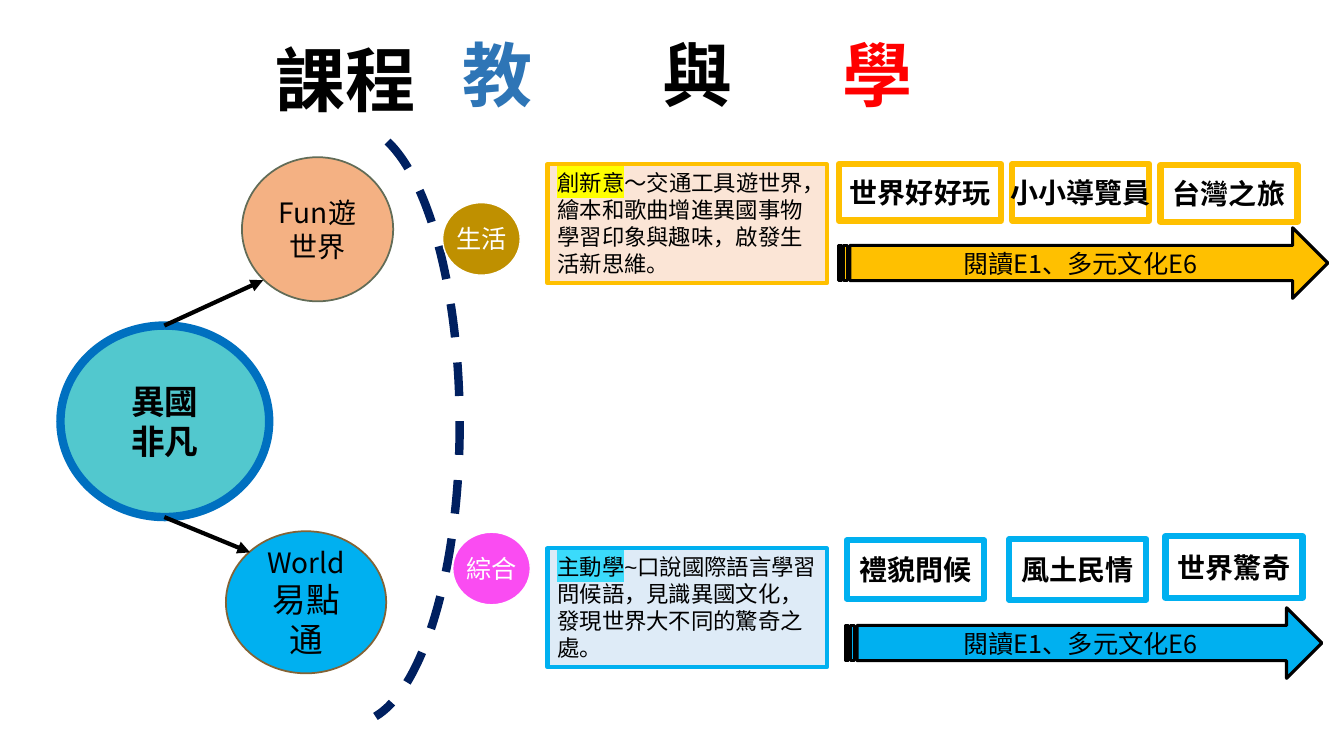
from dataclasses import dataclass
from typing import Optional

from lxml.etree import SubElement
from pptx import Presentation
from pptx.dml.color import RGBColor
from pptx.enum.dml import MSO_LINE
from pptx.enum.shapes import MSO_CONNECTOR, MSO_SHAPE
from pptx.enum.text import MSO_ANCHOR, PP_ALIGN
from pptx.oxml.ns import qn
from pptx.util import Inches, Pt

COLOURS = {
    "black": "000000", "white": "FFFFFF", "red": "FF0000", "title blue": "2E75B6",
    "teal": "52C8CE", "hub edge": "0070C0", "navy": "002060",
    "peach": "F4B183", "peach edge": "626C57", "sky edge": "846335",
    "gold": "FFC000", "pale gold": "FBE5D6", "yellow": "FFFF00", "ochre": "BF9000",
    "sky": "00B0F0", "pale sky": "DEEBF7", "cyan": "3BDBFB", "pink": "FA4CF2",
}
SANS, ARIAL = "Noto Sans CJK SC", "Arial"
CELL = 0.1  # side of one grid cell, in inches


@dataclass
class Area:
    """A place on the grid, in columns and rows."""
    column: float
    row: float
    columns: float
    rows: float


@dataclass
class Span:
    text: str
    size: float
    font: str = SANS
    colour: str = "black"
    bold: bool = False
    highlight: Optional[str] = None


@dataclass
class Figure:
    kind: MSO_SHAPE
    area: Area
    fill: Optional[str]
    edge: str
    weight: float
    paragraphs: list[list[Span]]
    align: PP_ALIGN = PP_ALIGN.CENTER
    anchor: MSO_ANCHOR = MSO_ANCHOR.MIDDLE
    wrap: bool = True


@dataclass
class Lane:
    """One teaching strand: field, description, topics and arrow."""
    colour: str
    pale: str
    marker: str
    field: Span
    field_colour: str
    field_area: Area
    lead: str
    description: str
    description_row: float
    topics: list[tuple[str, Area]]
    arrow_area: Area


def cells(count: float) -> int:
    return Inches(count * CELL)


def place(area: Area) -> tuple[int, ...]:
    return tuple(cells(n) for n in (area.column, area.row, area.columns, area.rows))


def rgb(name: str) -> RGBColor:
    return RGBColor.from_string(COLOURS[name])


def write(frame, paragraphs: list[list[Span]], align: PP_ALIGN) -> None:
    for index, spans in enumerate(paragraphs):
        para = frame.paragraphs[0] if index == 0 else frame.add_paragraph()
        para.alignment = align
        for span in spans:
            run = para.add_run()
            run.text = span.text
            font = run.font
            font.size, font.name, font.bold = Pt(span.size), span.font, span.bold
            font.color.rgb = rgb(span.colour)
            if span.highlight:
                properties = run.font._element
                mark = SubElement(properties, qn("a:highlight"))
                SubElement(mark, qn("a:srgbClr"), val=COLOURS[span.highlight])
                properties.find(qn("a:solidFill")).addnext(mark)


def draw_figure(page, figure: Figure):
    shape = page.shapes.add_shape(figure.kind, *place(figure.area))
    shape.shadow.inherit = False
    if figure.fill:
        shape.fill.solid()
        shape.fill.fore_color.rgb = rgb(figure.fill)
    else:
        shape.fill.background()
    shape.line.color.rgb = rgb(figure.edge)
    shape.line.width = Pt(figure.weight)
    frame = shape.text_frame
    frame.word_wrap = figure.wrap
    frame.vertical_anchor = figure.anchor
    write(frame, figure.paragraphs, figure.align)
    return shape


def draw_title(page, area: Area, spans: list[Span], stops: tuple[float, ...] = ()) -> None:
    box = page.shapes.add_textbox(*place(area))
    frame = box.text_frame
    frame.word_wrap = True
    frame.vertical_anchor = MSO_ANCHOR.MIDDLE
    write(frame, [spans], PP_ALIGN.LEFT)
    if stops:
        tabs = SubElement(frame.paragraphs[0]._p.get_or_add_pPr(), qn("a:tabLst"))
        for stop in stops:
            SubElement(tabs, qn("a:tab"), pos=str(cells(stop)), algn="l")


def draw_arrow(page, start: tuple[float, float], end: tuple[float, float]) -> None:
    arrow = page.shapes.add_connector(
        MSO_CONNECTOR.STRAIGHT, *(cells(n) for n in start + end))
    arrow.line.color.rgb = rgb("black")
    arrow.line.width = Pt(3)
    SubElement(arrow.line._get_or_add_ln(), qn("a:tailEnd"), type="triangle")
    SubElement(arrow._element.spPr, qn("a:effectLst"))


def draw_lane(page, lane: Lane) -> None:
    text = [Span(lane.lead, 16, ARIAL, highlight=lane.marker),
            Span(lane.description, 16, ARIAL)]
    draw_figure(page, Figure(
        MSO_SHAPE.RECTANGLE, Area(54.3, lane.description_row, 27.7, 11.8),
        lane.pale, lane.colour, 3, [text], PP_ALIGN.LEFT, MSO_ANCHOR.TOP))
    draw_figure(page, Figure(
        MSO_SHAPE.OVAL, lane.field_area, lane.field_colour, "white", 1,
        [[lane.field]], wrap=False))
    draw_figure(page, Figure(
        MSO_SHAPE.STRIPED_RIGHT_ARROW, lane.arrow_area, lane.colour, "black", 2.25,
        [[Span("閱讀E1、多元文化E6", 18)]]))
    for topic, area in lane.topics:
        draw_figure(page, Figure(
            MSO_SHAPE.RECTANGLE, area, None, lane.colour, 4.5,
            [[Span(topic, 20, ARIAL, bold=True)]], wrap=False))


CIRCLES = [
    Figure(MSO_SHAPE.OVAL, Area(6, 32.3, 20.7, 19), "teal", "hub edge", 6,
           [[Span(line, 24, "League Spartan", bold=True)] for line in ("異國", "非凡")]),
    Figure(MSO_SHAPE.OVAL, Area(24, 15.6, 15, 14.3), "peach", "peach edge", 1.25,
           [[Span("Fun遊世界", 20)]]),
    Figure(MSO_SHAPE.OVAL, Area(22.4, 52.7, 15.9, 14.1), "sky", "sky edge", 1.25,
           [[Span("World", 20), Span("易點通", 24)]]),
]
LANES = [
    Lane("gold", "pale gold", "yellow", Span("生活", 18, "Calibri", "white"), "ochre",
         Area(43.9, 20.1, 7.7, 7.2), "創新意",
         "～交通工具遊世界，繪本和歌曲增進異國事物學習印象與趣味，啟發生活新思維。", 16.3,
         [("世界好好玩", Area(83.2, 16.3, 16.1, 5.6)),
          ("小小導覽員", Area(100.4, 16.3, 13.6, 5.6)),
          ("台灣之旅", Area(115.1, 16.4, 13.6, 5.6))],
         Area(83.2, 22.6, 48.5, 7)),
    Lane("sky", "pale sky", "cyan", Span("綜合", 18, SANS, "white"), "pink",
         Area(44.9, 52.8, 7.7, 7.2), "主動學",
         "~口說國際語言學習問候語，見識異國文化，發現世界大不同的驚奇之處。", 54.4,
         [("禮貌問候", Area(84, 53.6, 13.6, 5.8)),
          ("風土民情", Area(100.1, 53.5, 13.6, 6)),
          ("世界驚奇", Area(115.6, 53.2, 13.6, 6.1))],
         Area(83.9, 60.3, 47.2, 7)),
]


def main() -> None:
    deck = Presentation()
    deck.slide_width, deck.slide_height = Inches(13.33), Inches(7.5)
    page = deck.slides.add_slide(deck.slide_layouts[6])

    # Theme circles and the arrows from the hub
    for circle in CIRCLES:
        draw_figure(page, circle)
    draw_arrow(page, (16.3, 51.3), (24.8, 54.8))
    draw_arrow(page, (16.3, 32.3), (26.1, 27.8))

    # Dashed divider
    divider = draw_figure(page, Figure(
        MSO_SHAPE.ARC, Area(24.6, 12.5, 21, 59.2), None, "navy", 6, []))
    divider.line.dash_style = MSO_LINE.DASH
    divider.adjustments[0], divider.adjustments[1] = 166.09, 51.46

    # Title
    draw_title(page, Area(26.3, 3.1, 19.4, 9.4), [Span("課程", 50, bold=True)])
    draw_title(page, Area(44.9, 2.6, 60.6, 9.4), [
        Span("教", 50, colour="title blue", bold=True),
        Span("\t與\t", 50, bold=True),
        Span("學", 50, colour="red", bold=True)], stops=(19.8, 37.7))

    # Teaching strands
    for lane in LANES:
        draw_lane(page, lane)

    deck.save("out.pptx")


if __name__ == "__main__":
    main()
